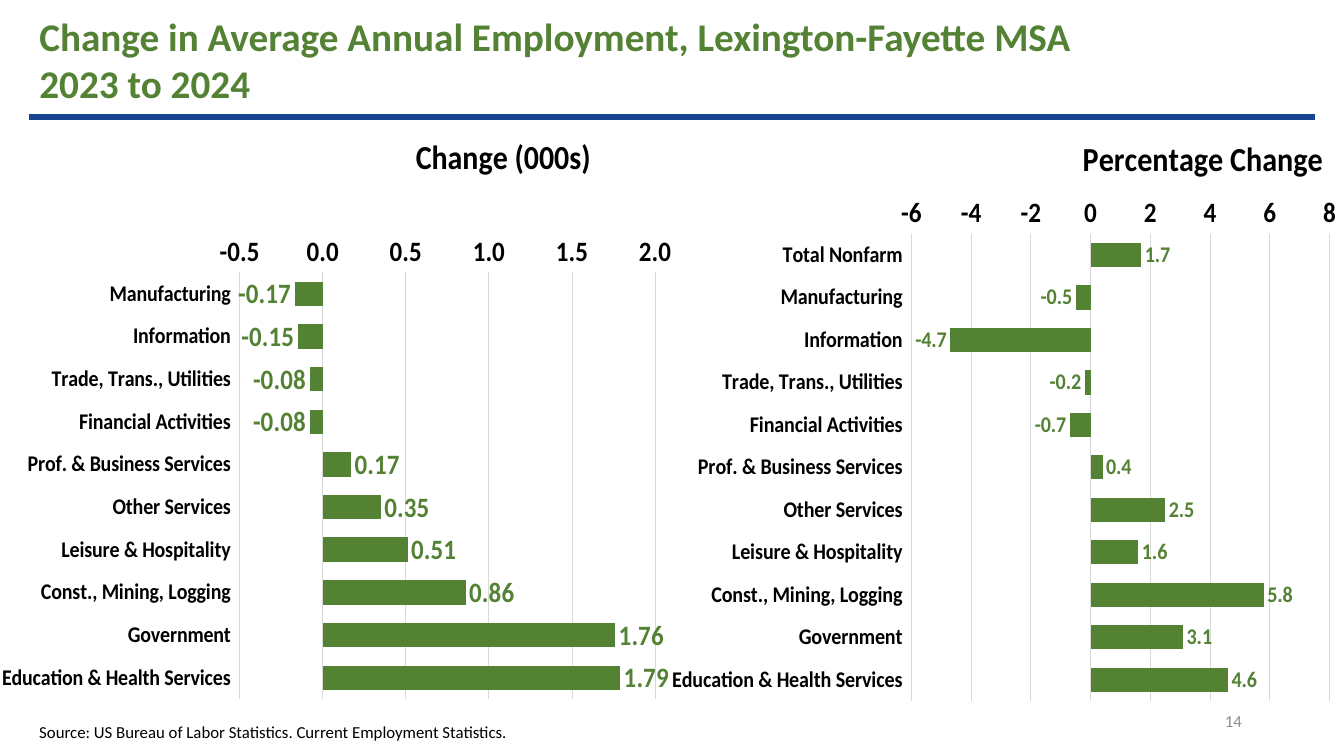
from lxml import etree
from pptx import Presentation
from pptx.chart.data import CategoryChartData
from pptx.dml.color import RGBColor
from pptx.enum.chart import XL_CHART_TYPE, XL_LABEL_POSITION, XL_TICK_LABEL_POSITION, XL_TICK_MARK
from pptx.enum.shapes import MSO_CONNECTOR
from pptx.enum.text import MSO_ANCHOR, MSO_AUTO_SIZE, PP_ALIGN
from pptx.oxml.ns import qn
from pptx.util import Cm, Pt

BAR = XL_CHART_TYPE.BAR_CLUSTERED
OUTSIDE = XL_LABEL_POSITION.OUTSIDE_END
LOW = XL_TICK_LABEL_POSITION.LOW
NO_TICK = XL_TICK_MARK.NONE
STRAIGHT = MSO_CONNECTOR.STRAIGHT
TOP, MIDDLE = MSO_ANCHOR.TOP, MSO_ANCHOR.MIDDLE
LEFT, RIGHT = PP_ALIGN.LEFT, PP_ALIGN.RIGHT

THEME = {
    "font": "Calibri",
    "green": RGBColor(0x54, 0x82, 0x35),
    "blue": RGBColor(0x17, 0x46, 0x8E),
    "black": RGBColor(0, 0, 0),
    "gray": RGBColor(0x8C, 0x8C, 0x8C),
    "grid": RGBColor(0xD9, 0xD9, 0xD9),
    "title": Pt(28), "chart_title": Pt(24), "axis": Pt(20),
    "category": Pt(16), "note": Pt(12),
}


def style_font(font, size, color, bold=False):
    for name, value in {"name": THEME["font"], "size": THEME[size], "bold": bold}.items():
        setattr(font, name, value)
    font.color.rgb = THEME[color]


def set_layout(parent, index, values):
    for old in parent.findall(qn("c:layout")):
        parent.remove(old)
    layout = etree.Element(qn("c:layout"))
    manual = etree.SubElement(layout, qn("c:manualLayout"))
    for tag, value in values.items():
        etree.SubElement(manual, qn("c:" + tag)).set("val", str(value))
    parent.insert(index, layout)


prs = Presentation()
prs.slide_width, prs.slide_height = Cm(33.87), Cm(19.05)
s = prs.slides.add_slide(prs.slide_layouts[5])

# Rule under the title
rule = s.shapes.add_connector(STRAIGHT, Cm(0.74), Cm(2.95), Cm(33.15), Cm(2.95))
rule.line.color.rgb = THEME["blue"]
rule.line.width = Pt(4.5)
etree.SubElement(rule.element.spPr, qn("a:effectLst"))

# Title, source and page number
number = s.shapes.add_textbox(0, 0, Cm(1), Cm(1))
source = s.shapes.add_textbox(0, 0, Cm(1), Cm(1))
texts = [
    (s.shapes.title, (0.74, 0.18, 27.66, 2.64),
     ["Change in Average Annual Employment, Lexington-Fayette MSA", "2023 to 2024"],
     ("title", "green", True), LEFT, TOP),
    (number, (23.93, 17.65, 7.62, 1.02), ["14"], ("note", "gray"), RIGHT, MIDDLE),
    (source, (0.74, 18.06, 25.81, 0.76),
     ["Source: US Bureau of Labor Statistics. Current Employment Statistics."],
     ("note", "black"), LEFT, TOP),
]
for sp, box, lines, look, align, anchor in texts:
    sp.left, sp.top, sp.width, sp.height = map(Cm, box)
    tf = sp.text_frame
    tf.word_wrap = True
    tf.auto_size = MSO_AUTO_SIZE.NONE
    tf.vertical_anchor = anchor
    for i, line in enumerate(lines):
        p = tf.add_paragraph() if i else tf.paragraphs[0]
        p.alignment = align
        r = p.add_run()
        r.text = line
        style_font(r.font, *look)

# Chart data
sectors = ["Manufacturing", "Information", "Trade, Trans., Utilities", "Financial Activities",
           "Prof. & Business Services", "Other Services", "Leisure & Hospitality",
           "Const., Mining, Logging", "Government", "Education & Health Services"]
charts = [
    {"title": "Change (000s)", "title_at": (0.57, 0.02), "at": (0.05, 2.92),
     "cats": sectors, "scale": (-0.5, 2, 0.5), "axis_format": "0.0",
     "values": [-0.17, -0.15, -0.08, -0.08, 0.17, 0.35, 0.51, 0.86, 1.76, 1.79],
     "label_format": "#,##0.00", "label_size": "axis", "plot": (0.262, 0.714)},
    {"title": "Percentage Change", "title_at": (0.56, 0.02), "at": (16.94, 2.97),
     "cats": ["Total Nonfarm"] + sectors, "scale": (-6, 8, 2), "axis_format": "0",
     "values": [1.7, -0.5, -4.7, -0.2, -0.7, 0.4, 2.5, 1.6, 5.8, 3.1, 4.6],
     "label_format": "#,##0.0", "label_size": "category", "plot": (0.194, 0.782)},
]

for c in charts:
    data = CategoryChartData()
    data.categories = c["cats"]
    data.add_series("Series 1", c["values"])
    left, top = map(Cm, c["at"])
    chart = s.shapes.add_chart(BAR, left, top, Cm(16.87), Cm(15.06), data).chart
    chart.has_legend = False
    style_font(chart.font, "axis", "black", True)

    # Chart title
    p = chart.chart_title.text_frame.paragraphs[0]
    r = p.add_run()
    r.text = c["title"]
    style_font(r.font, "chart_title", "black", True)
    x, y = c["title_at"]
    set_layout(chart.element.find(".//" + qn("c:title")), 1,
               {"xMode": "edge", "yMode": "edge", "x": x, "y": y})

    # Plot area
    y, h = c["plot"]
    set_layout(chart.element.find(".//" + qn("c:plotArea")), 0,
               {"layoutTarget": "inner", "xMode": "edge", "yMode": "edge",
                "x": 0.284, "y": y, "w": 0.696, "h": h})

    # Axes
    cat, val = chart.category_axis, chart.value_axis
    low, high, step = c["scale"]
    formats = [
        (cat, {"reverse_order": True, "tick_label_position": LOW, "has_major_gridlines": False}),
        (val, {"minimum_scale": low, "maximum_scale": high, "major_unit": step,
               "has_major_gridlines": True}),
        (val.tick_labels, {"number_format": c["axis_format"], "number_format_is_linked": False}),
    ]
    for axis, size in ((cat, "category"), (val, "axis")):
        formats.append((axis, {"major_tick_mark": NO_TICK, "minor_tick_mark": NO_TICK}))
        style_font(axis.tick_labels.font, size, "black", True)

    # Bars and labels
    plot = chart.plots[0]
    series = plot.series[0]
    labels = series.data_labels
    formats += [
        (plot, {"gap_width": 75, "vary_by_categories": False}),
        (series, {"invert_if_negative": False}),
        (labels, {"show_value": True, "position": OUTSIDE,
                  "number_format": c["label_format"], "number_format_is_linked": False}),
    ]
    for target, values in formats:
        for name, value in values.items():
            setattr(target, name, value)
    series.format.fill.solid()
    series.format.fill.fore_color.rgb = THEME["green"]
    style_font(labels.font, c["label_size"], "green", True)

    # Axis and grid lines
    val.format.line.fill.background()
    for line in (cat.format.line, val.major_gridlines.format.line):
        line.color.rgb = THEME["grid"]
        line.width = Pt(0.75)

prs.save("out.pptx")
